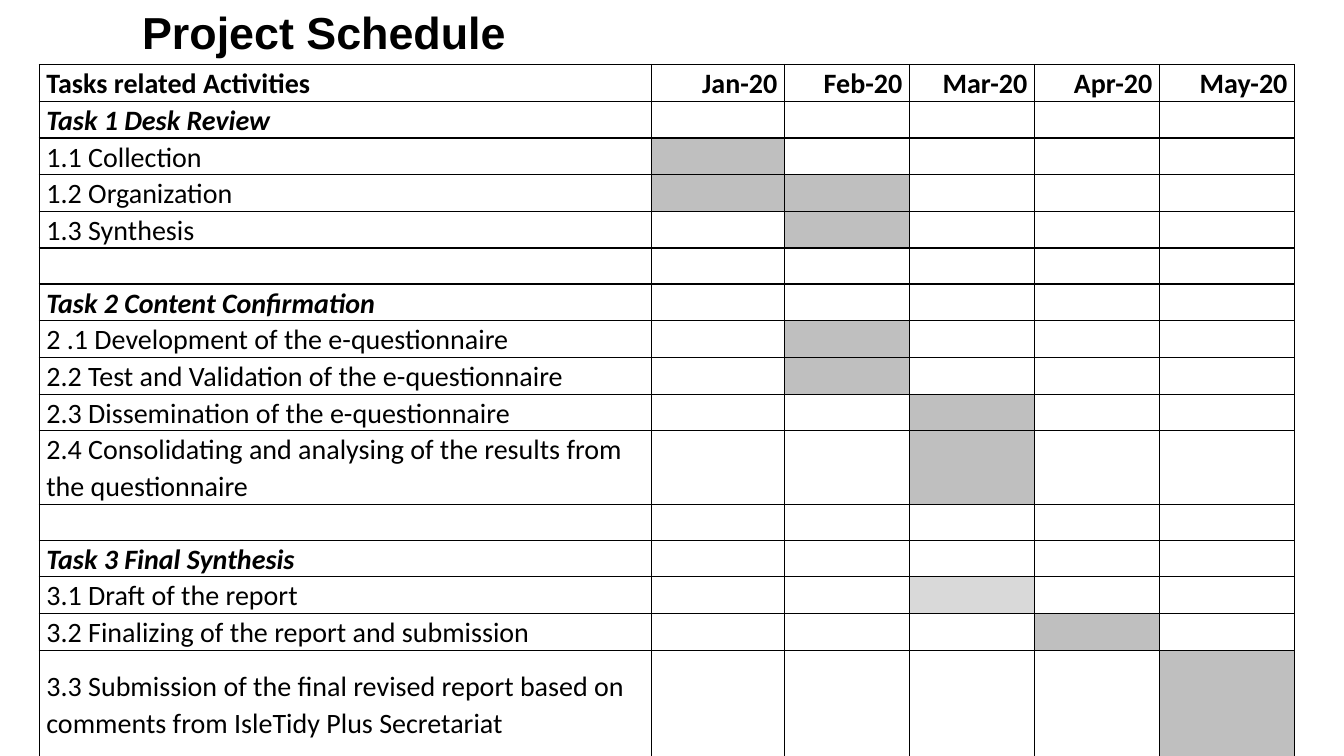
"""Build the project schedule slide with its monthly task grid."""
from lxml.etree import SubElement
from pptx import Presentation
from pptx.dml.color import RGBColor
from pptx.enum.text import MSO_ANCHOR as Anchor, MSO_AUTO_SIZE as AutoSize, PP_ALIGN as Align
from pptx.oxml.ns import qn
from pptx.util import Inches, Pt

BLACK = RGBColor(0x00, 0x00, 0x00)
WHITE = RGBColor(0xFF, 0xFF, 0xFF)
GREY = RGBColor(0xBF, 0xBF, 0xBF)
LIGHT_GREY = RGBColor(0xD9, 0xD9, 0xD9)

TITLE_ONLY = 5
TABLE_LEFT, TABLE_TOP, TABLE_HEIGHT = Inches(0.39), Inches(0.64), Inches(6.77)
COLUMN_WIDTHS = [Inches(width) for width in (6.07, 1.32, 1.24, 1.24, 1.24, 1.34)]
MONTHS = ["Jan-20", "Feb-20", "Mar-20", "Apr-20", "May-20"]
ROW_UNITS = {10: 2, 15: 3}
HEADING_ROWS = (1, 6, 12)
ACTIVITIES = [
    ("Task 1 Desk Review", {}),
    ("1.1 Collection", {1: GREY}),
    ("1.2 Organization", {1: GREY, 2: GREY}),
    ("1.3 Synthesis", {2: GREY}),
    ("", {}),
    ("Task 2 Content Confirmation", {}),
    ("2 .1 Development of the e-questionnaire", {2: GREY}),
    ("2.2 Test and Validation of the e-questionnaire", {2: GREY}),
    ("2.3 Dissemination of the e-questionnaire", {3: GREY}),
    ("2.4 Consolidating and analysing of the results from the questionnaire", {3: GREY}),
    ("", {}),
    ("Task 3 Final Synthesis", {}),
    ("3.1 Draft of the report", {3: LIGHT_GREY}),
    ("3.2 Finalizing of the report and submission", {4: GREY}),
    ("3.3 Submission of the final revised report based on "
     "comments from IsleTidy Plus Secretariat", {5: GREY}),
]


def add_run(paragraph, text, font_name, size, bold=False, italic=False):
    """Append one formatted run to a paragraph."""
    run = paragraph.add_run()
    run.text = text
    font = run.font
    font.name, font.size = font_name, Pt(size)
    font.bold, font.italic = bold, italic
    font.color.rgb = BLACK


def set_title(slide, text):
    """Place and format the title placeholder."""
    title = slide.shapes.title
    title.left, title.top = Inches(1.31), 0
    title.width, title.height = Inches(3.84), TABLE_TOP
    frame = title.text_frame
    frame.word_wrap = False
    frame.auto_size = AutoSize.NONE
    frame.vertical_anchor = Anchor.TOP
    paragraph = frame.paragraphs[0]
    paragraph.alignment = Align.LEFT
    paragraph.space_before = Pt(6)
    add_run(paragraph, text, "Arial", 32, bold=True)


def add_borders(cell):
    """Draw a thin black line on every side of a cell."""
    properties = cell._tc.get_or_add_tcPr()
    for position, side in enumerate(("a:lnL", "a:lnR", "a:lnT", "a:lnB")):
        line = properties.makeelement(qn(side), {"w": str(Pt(1))})
        fill = SubElement(line, qn("a:solidFill"))
        SubElement(fill, qn("a:srgbClr"), val=str(BLACK))
        properties.insert(position, line)


def format_cell(cell, color, anchor):
    """Set the fill, insets, anchor and borders of a cell."""
    cell.fill.solid()
    cell.fill.fore_color.rgb = color
    cell.margin_left = cell.margin_right = Inches(0.07)
    cell.margin_top = cell.margin_bottom = 0
    cell.vertical_anchor = anchor
    add_borders(cell)


def write_cell(cell, text, alignment, bold, italic):
    """Write one line of schedule text into a cell."""
    paragraph = cell.text_frame.paragraphs[0]
    paragraph.alignment = alignment
    paragraph.line_spacing = 1.07
    add_run(paragraph, text, "Calibri", 20, bold, italic)


def add_schedule(slide):
    """Add the table of activities with its shaded months."""
    rows = [("Tasks related Activities", {})] + ACTIVITIES
    units = [ROW_UNITS.get(index, 1) for index in range(len(rows))]
    table = slide.shapes.add_table(
        len(rows), len(COLUMN_WIDTHS), TABLE_LEFT, TABLE_TOP, sum(COLUMN_WIDTHS), TABLE_HEIGHT
    ).table
    table.first_row = table.horz_banding = False
    for column, width in zip(table.columns, COLUMN_WIDTHS):
        column.width = width
    for row_index, (activity, shades) in enumerate(rows):
        row = table.rows[row_index]
        row.height = TABLE_HEIGHT * units[row_index] // sum(units)
        is_header = row_index == 0
        is_heading = row_index in HEADING_ROWS
        texts = [activity] + (MONTHS if is_header else [""] * len(MONTHS))
        for column_index, (cell, text) in enumerate(zip(row.cells, texts)):
            anchor = Anchor.BOTTOM if is_header else Anchor.MIDDLE
            format_cell(cell, shades.get(column_index, WHITE), anchor)
            if text:
                alignment = Align.RIGHT if column_index else Align.LEFT
                write_cell(cell, text, alignment, is_header or is_heading, is_heading)


def main():
    """Create and save the presentation."""
    presentation = Presentation()
    presentation.slide_width, presentation.slide_height = Inches(13.33), Inches(7.5)
    slide = presentation.slides.add_slide(presentation.slide_layouts[TITLE_ONLY])
    set_title(slide, "Project Schedule")
    add_schedule(slide)
    presentation.save("out.pptx")


if __name__ == "__main__":
    main()
